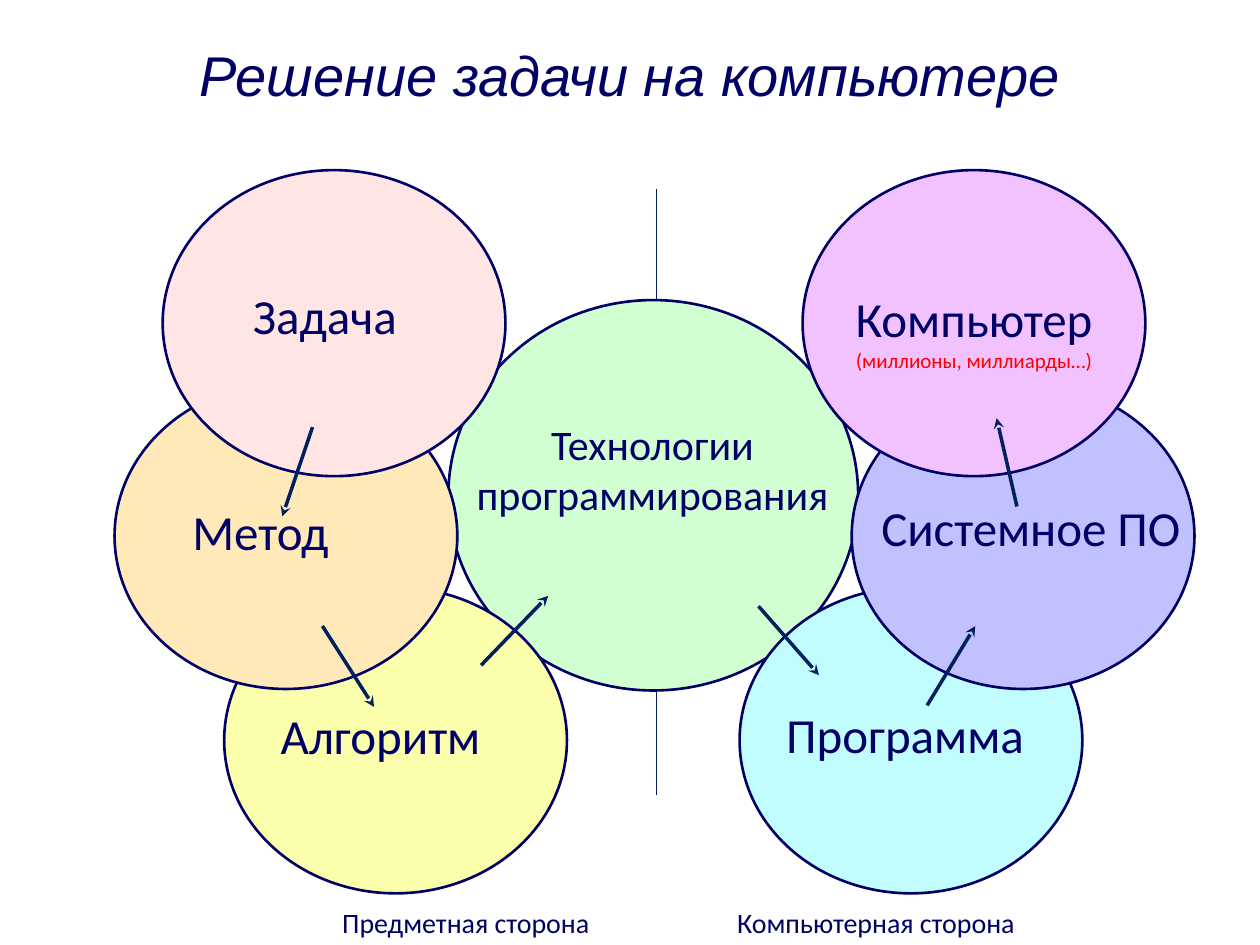
"""Build the slide on solving a problem with a computer."""
from lxml.etree import SubElement
from pptx import Presentation
from pptx.dml.color import RGBColor
from pptx.enum.shapes import MSO_CONNECTOR as Link, MSO_SHAPE as Shape
from pptx.enum.text import MSO_ANCHOR as Anchor, MSO_AUTO_SIZE as Fit, PP_ALIGN as Align
from pptx.oxml.ns import qn
from pptx.util import Cm, Pt

NAVY = RGBColor(0x00, 0x00, 0x66)
INK = RGBColor(0x00, 0x20, 0x60)
RED = RGBColor(0xFF, 0x00, 0x00)
GREEN = RGBColor(0xD2, 0xFF, 0xD1)
YELLOW = RGBColor(0xFB, 0xFF, 0xAB)
ORANGE = RGBColor(0xFF, 0xE9, 0xB9)
PINK = RGBColor(0xFF, 0xE6, 0xE5)
CYAN = RGBColor(0xC1, 0xFC, 0xFF)
BLUE = RGBColor(0xC1, 0xC1, 0xFF)
VIOLET = RGBColor(0xF2, 0xC1, 0xFF)

WIDE, HIGH = 6.91, 6.17
TOP, MID, LOW = 3.43, 7.72, 11.84

deck = Presentation()
deck.slide_width, deck.slide_height = Cm(25.4), Cm(19.05)
slide = deck.slides.add_slide(deck.slide_layouts[6])
shapes = slide.shapes


def add_text(text, box, size=28, font="Calibri", align=Align.LEFT,
             italic=None, wrap=False, anchor=Anchor.TOP, note=None):
    frame = shapes.add_textbox(*map(Cm, box)).text_frame
    frame.word_wrap = wrap
    frame.auto_size = Fit.NONE if wrap else Fit.SHAPE_TO_FIT_TEXT
    frame.vertical_anchor = anchor
    rows = [(row, size, NAVY) for row in text.split("\n")]
    if note:
        rows.append((note, 12, RED))
    for num, (row, points, color) in enumerate(rows):
        para = frame.add_paragraph() if num else frame.paragraphs[0]
        para.alignment = align
        run = para.add_run()
        run.text = row
        run.font.size = Pt(points)
        run.font.name = font
        run.font.italic = italic
        run.font.color.rgb = color


def add_line(ends, width, head=False):
    link = shapes.add_connector(Link.STRAIGHT, *map(Cm, ends))
    link.line.color.rgb = INK
    link.line.width = Pt(width)
    if head:
        SubElement(link.line._get_or_add_ln(), qn("a:tailEnd"), type="stealth")
    SubElement(link._element.spPr, qn("a:effectLst"))


add_line((13.23, 3.81, 13.23, 16.03), 0.75)
add_text("Решение задачи на компьютере", (0, 0.43, 25.4, 2.11), size=32,
         font="Arial", align=Align.CENTER, italic=True, wrap=True,
         anchor=Anchor.MIDDLE)

ovals = [
    (9.04, 6.05, 8.26, 7.87, GREEN),
    (4.52, LOW, WIDE, HIGH, YELLOW),
    (2.31, MID, WIDE, HIGH, ORANGE),
    (3.28, TOP, WIDE, HIGH, PINK),
    (14.91, LOW, WIDE, HIGH, CYAN),
    (17.17, MID, WIDE, HIGH, BLUE),
    (16.18, TOP, WIDE, HIGH, VIOLET),
]
for *box, color in ovals:
    oval = shapes.add_shape(Shape.OVAL, *map(Cm, box))
    oval.shadow.inherit = False
    oval.fill.solid()
    oval.fill.fore_color.rgb = color
    oval.line.color.rgb = NAVY
    oval.line.width = Pt(1.5)

add_text("Задача", (4.85, 5.64, 3.43, 1.45))
add_text("Метод", (3.63, 9.98, 3.28, 1.45))
add_text("Алгоритм", (5.41, 14.1, 4.57, 1.45))
add_text("Технологии\nпрограммирования", (9.32, 8.31, 7.67, 2.31),
         size=24, align=Align.CENTER)
add_text("Программа", (15.6, 14.07, 5.36, 1.45))
add_text("Системное ПО", (17.48, 9.91, 6.6, 1.45), align=Align.CENTER)
add_text("Компьютер", (16.97, 5.69, 5.33, 1.96), align=Align.CENTER,
         note="(миллионы, миллиарды…)")

arrows = [
    (6.3, 8.61, 5.69, 10.41),
    (6.5, 12.62, 7.54, 14.25),
    (9.7, 13.41, 11.05, 12.01),
    (15.29, 12.22, 16.51, 13.61),
    (18.69, 14.22, 19.66, 12.62),
    (20.5, 10.21, 20.09, 8.43),
]
for ends in arrows:
    add_line(ends, 2, head=True)

add_text("Предметная сторона", (6.65, 18.14, 5.56, 0.94), size=16)
add_text("Компьютерная сторона", (14.61, 18.14, 6.2, 0.94), size=16)

deck.save("out.pptx")
